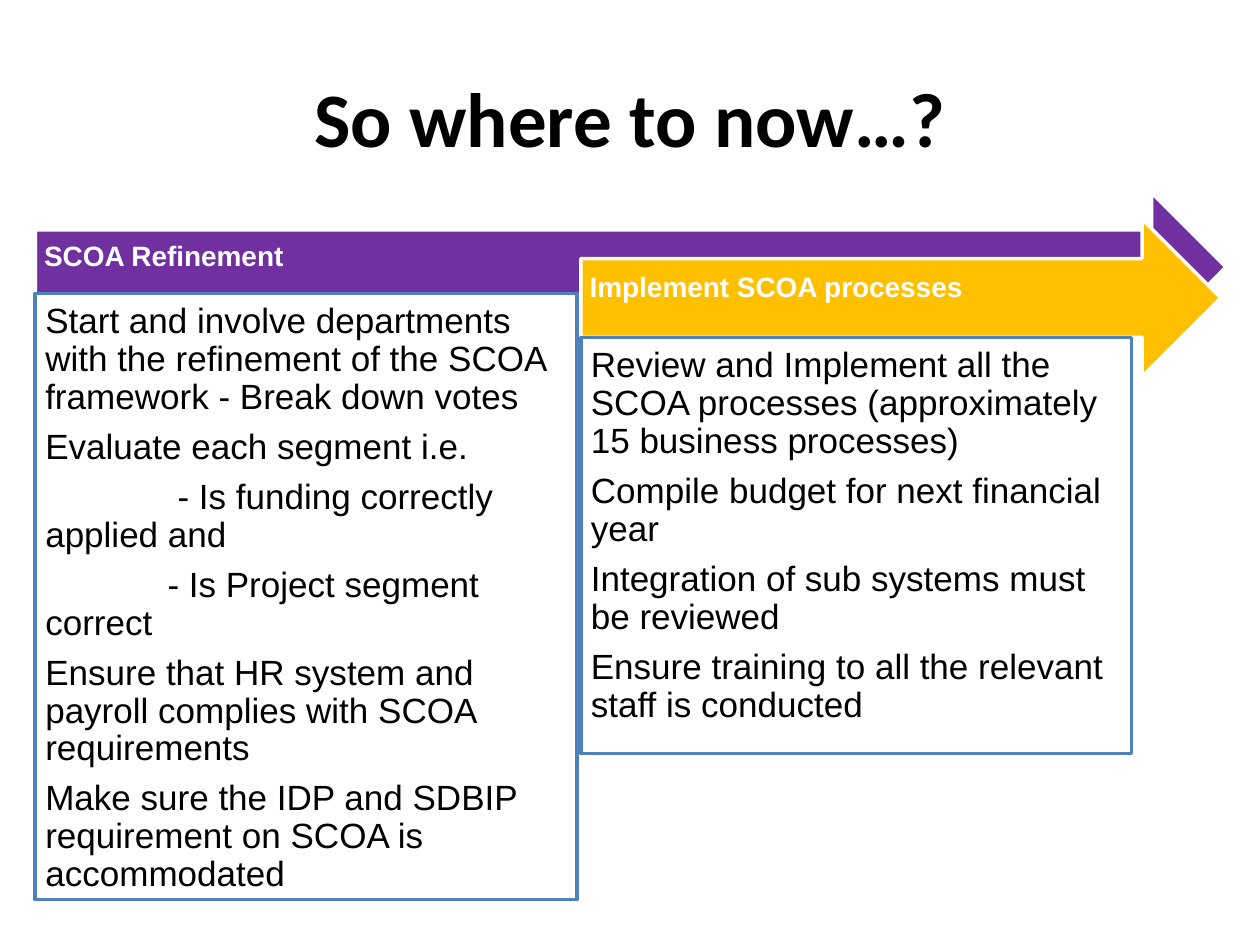
"""Build a slide with two overlapping stage arrows and their task lists."""
from pptx import Presentation
from pptx.dml.color import RGBColor
from pptx.enum.shapes import MSO_SHAPE
from pptx.enum.text import MSO_ANCHOR, PP_ALIGN
from pptx.util import Inches, Pt

ARROW, BOX = MSO_SHAPE.RIGHT_ARROW, MSO_SHAPE.RECTANGLE
TOP, MIDDLE = MSO_ANCHOR.TOP, MSO_ANCHOR.MIDDLE
LEFT, CENTER = PP_ALIGN.LEFT, PP_ALIGN.CENTER

WIDTH, HEIGHT = 10, 7.5
TITLE = "So where to now…?"
STAGES = [
    {
        "name": "SCOA Refinement",
        "color": "7030A0",
        "arrow": (0.28, 1.53, 9.45, 1.18),
        "box": (0.28, 2.33, 4.3, 4.81),
        "tasks": [
            ("Start and involve departments with the refinement of the SCOA "
             "framework - Break down votes", 0),
            ("Evaluate each segment i.e.", 0),
            ("- Is funding correctly applied and", 1.05),
            ("- Is Project segment correct", 0.97),
            ("Ensure that HR system and payroll complies with SCOA requirements", 0),
            ("Make sure the IDP and SDBIP requirement on SCOA is accommodated", 0),
        ],
    },
    {
        "name": "Implement SCOA processes",
        "color": "FFC000",
        "arrow": (4.61, 1.74, 5.08, 1.25),
        "box": (4.61, 2.68, 4.37, 3.3),
        "tasks": [
            ("Review and Implement all the SCOA processes "
             "(approximately 15 business processes)", 0),
            ("Compile budget for next financial year", 0),
            ("Integration of sub systems must be reviewed", 0),
            ("Ensure training to all the relevant staff is conducted", 0),
        ],
    },
]


def rgb(value):
    """Turn a hex string into a colour."""
    return RGBColor.from_string(value)


def write(shape, lines, size, color="000000", font="Arial", bold=False,
          align=LEFT, anchor=TOP, insets=(0.08,) * 4, spacing=0.9, after=0):
    """Fill a shape with (text, first-line indent) paragraphs."""
    frame = shape.text_frame
    frame.word_wrap = True
    frame.vertical_anchor = anchor
    (frame.margin_left, frame.margin_top,
     frame.margin_right, frame.margin_bottom) = map(Inches, insets)
    for index, (text, indent) in enumerate(lines):
        paragraph = frame.add_paragraph() if index else frame.paragraphs[0]
        paragraph.alignment = align
        paragraph.line_spacing = spacing
        paragraph.space_after = Pt(after)
        if indent:
            properties = paragraph._p.get_or_add_pPr()
            properties.set("marL", "0")
            properties.set("indent", str(Inches(indent)))
        run = paragraph.add_run()
        run.text = text
        run.font.name, run.font.size, run.font.bold = font, Pt(size), bold
        run.font.color.rgb = rgb(color)


def add_panel(slide, kind, place, fill, line):
    """Add a filled and outlined shape without a shadow."""
    shape = slide.shapes.add_shape(kind, *map(Inches, place))
    shape.shadow.inherit = False
    shape.fill.solid()
    shape.fill.fore_color.rgb = rgb(fill)
    shape.line.color.rgb = rgb(line)
    shape.line.width = Pt(2)
    return shape


def main():
    """Create and save the presentation."""
    presentation = Presentation()
    presentation.slide_width, presentation.slide_height = Inches(WIDTH), Inches(HEIGHT)
    slide = presentation.slides.add_slide(presentation.slide_layouts[6])
    title = slide.shapes.add_textbox(*map(Inches, (0.5, 0.3, WIDTH - 1, 1.25)))
    write(title, [(TITLE, 0)], 44, font="Calibri", bold=True,
          align=CENTER, anchor=MIDDLE, spacing=1.0)
    for stage in STAGES:
        arrow = add_panel(slide, ARROW, stage["arrow"], stage["color"], "FFFFFF")
        write(arrow, [(stage["name"], 0)], 16, color="FFFFFF", bold=True,
              anchor=MIDDLE, insets=(0.07, 0.07, 0.28, 0.22))
        box = add_panel(slide, BOX, stage["box"], "FFFFFF", "4F81BD")
        write(box, stage["tasks"], 20, after=7)
    presentation.save("out.pptx")


if __name__ == "__main__":
    main()
